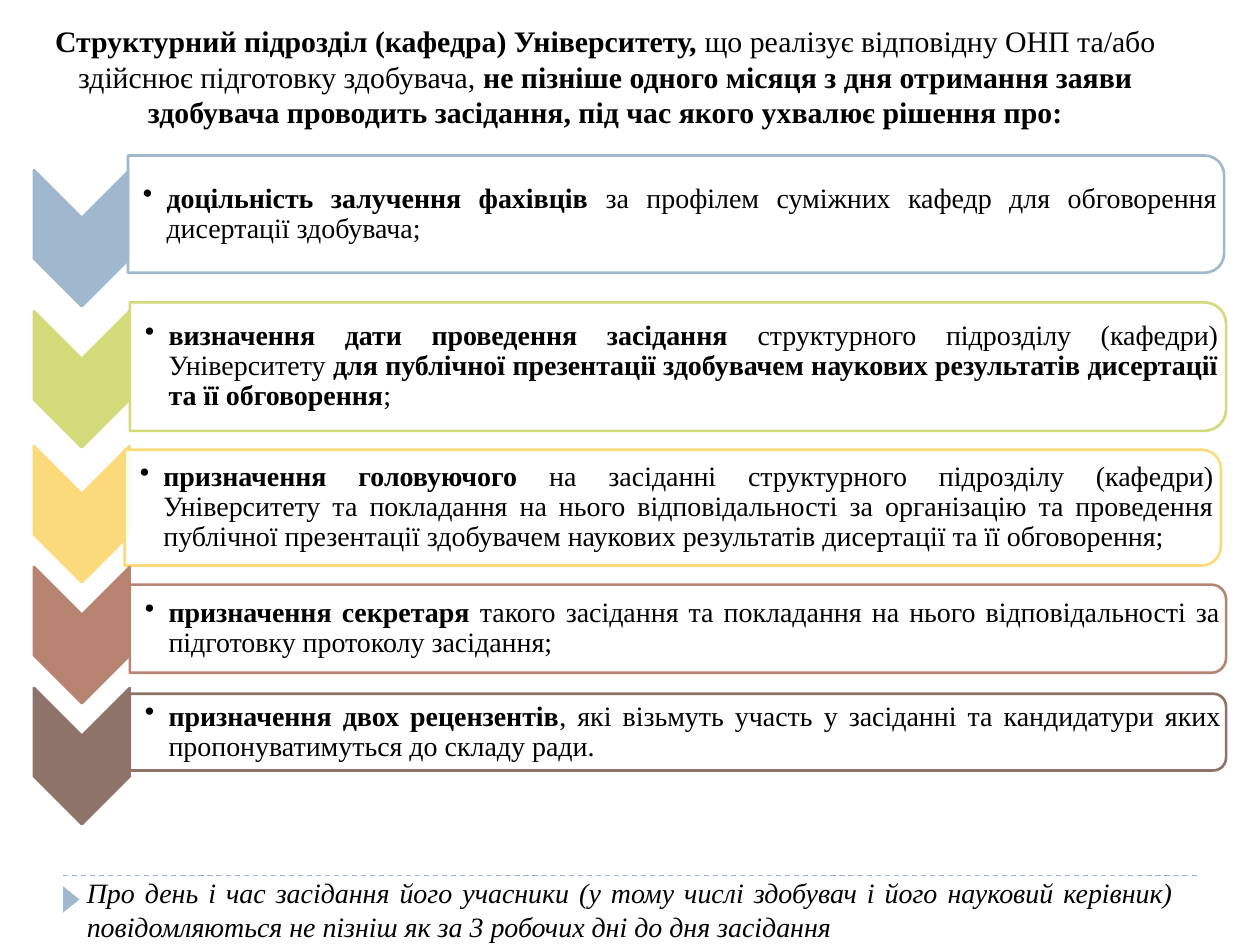
from lxml.etree import SubElement
from pptx import Presentation
from pptx.dml.color import RGBColor
from pptx.enum.dml import MSO_LINE
from pptx.enum.shapes import MSO_CONNECTOR, MSO_SHAPE as Shape
from pptx.enum.text import MSO_ANCHOR as Anchor, PP_ALIGN as Align
from pptx.oxml.ns import qn
from pptx.util import Pt

FONT = "Times New Roman"
BLACK = RGBColor(0x00, 0x00, 0x00)
WHITE = RGBColor(0xFF, 0xFF, 0xFF)
BLUE = RGBColor(0x9F, 0xB8, 0xCD)
GREEN = RGBColor(0xD2, 0xDA, 0x7A)
YELLOW = RGBColor(0xFA, 0xDA, 0x7A)
TERRACOTTA = RGBColor(0xB8, 0x84, 0x72)
BROWN = RGBColor(0x8E, 0x73, 0x6A)

CHEVRON_LEFT, CHEVRON_WIDTH, CHEVRON_HEIGHT = 19.4, 54.7, 77.8
BAR_WIDTH = 626.4

# Text spans are (wording, bold).
TITLE = [
    ("Структурний підрозділ (кафедра) Університету, ", True),
    ("що реалізує відповідну ОНП та/або здійснює підготовку здобувача, ", False),
    ("не пізніше одного місяця з дня отримання заяви здобувача проводить "
     "засідання, під час якого ухвалює рішення про:", True),
]
FOOTNOTE = [
    ("Про день і час засідання його учасники (у тому числі здобувач і його "
     "науковий керівник) повідомляються не пізніш як за 3 робочих дні до дня "
     "засідання", False),
]
# Each decision: colour, chevron top, bar left, bar top, bar height, spans.
DECISIONS = [
    (BLUE, 97.2, 73.1, 88.9, 67, [
        ("доцільність залучення фахівців ", True),
        ("за профілем суміжних кафедр для обговорення дисертації здобувача;", False)]),
    (GREEN, 177.8, 74.2, 172.8, 73.4, [
        ("визначення дати проведення засідання ", True),
        ("структурного підрозділу (кафедри) Університету ", False),
        ("для публічної презентації здобувачем наукових результатів дисертації "
         "та її обговорення", True),
        (";", False)]),
    (YELLOW, 254.9, 71.3, 257, 66.2, [
        ("призначення головуючого ", True),
        ("на засіданні структурного підрозділу (кафедри) Університету та "
         "покладання на нього відповідальності за організацію та проведення "
         "публічної презентації здобувачем наукових результатів дисертації та "
         "її обговорення;", False)]),
    (TERRACOTTA, 324, 74.2, 334.1, 50.4, [
        ("призначення секретаря ", True),
        ("такого засідання та покладання на нього відповідальності за "
         "підготовку протоколу засідання;", False)]),
    (BROWN, 393.1, 74.2, 396.4, 43.9, [
        ("призначення двох рецензентів", True),
        (", які візьмуть участь у засіданні та кандидатури яких "
         "пропонуватимуться до складу ради.", False)]),
]


def add_turned_shape(page, kind, left, top, width, height, fill, line=None):
    """Add a shape turned by 90 degrees that covers the given box on the page."""
    shift = (width - height) / 2
    shape = page.shapes.add_shape(
        kind, Pt(left + shift), Pt(top - shift), Pt(height), Pt(width))
    shape.rotation = 90
    shape.shadow.inherit = False
    shape.fill.solid()
    shape.fill.fore_color.rgb = fill
    if line is None:
        shape.line.fill.background()
    else:
        shape.line.color.rgb = line
        shape.line.width = Pt(1.5)
    return shape


def add_text(page, left, top, width, height, spans, size, align,
             italic=None, bullet=False):
    box = page.shapes.add_textbox(Pt(left), Pt(top), Pt(width), Pt(height))
    frame = box.text_frame
    frame.word_wrap = True
    para = frame.paragraphs[0]
    para.alignment = align
    if bullet:
        frame.vertical_anchor = Anchor.MIDDLE
        frame.margin_left = Pt(8.6)
        frame.margin_top = frame.margin_right = frame.margin_bottom = Pt(0.7)
        para.line_spacing = 0.9
        properties = para._p.get_or_add_pPr()
        properties.set("marL", str(Pt(13.5)))
        properties.set("indent", str(-Pt(13.5)))
        SubElement(properties, qn("a:buChar"), char="•")
    para.font.name = FONT
    para.font.size = Pt(size)
    para.font.color.rgb = BLACK
    para.font.italic = italic
    for wording, bold in spans:
        span = para.add_run()
        span.text = wording
        span.font.bold = bold


def add_decision(page, colour, chevron_top, left, top, height, spans):
    add_turned_shape(page, Shape.CHEVRON, CHEVRON_LEFT, chevron_top,
                     CHEVRON_WIDTH, CHEVRON_HEIGHT, colour, colour)
    bar = add_turned_shape(page, Shape.ROUND_2_SAME_RECTANGLE, left, top,
                           BAR_WIDTH, height, WHITE, colour)
    white = bar.fill._xPr.find(qn("a:solidFill"))[0]
    SubElement(white, qn("a:alpha"), val="90000")
    # The text area stays clear of the rounded corners.
    add_text(page, left, top + 0.05 * height, BAR_WIDTH - 0.05 * height,
             0.9 * height, spans, 16, Align.JUSTIFY, bullet=True)


def add_footer_marks(page, left, top, width):
    rule = page.shapes.add_connector(
        MSO_CONNECTOR.STRAIGHT, Pt(left), Pt(top), Pt(left + width), Pt(top))
    rule.line.color.rgb = BLUE
    rule.line.width = Pt(0.75)
    rule.line.dash_style = MSO_LINE.DASH
    SubElement(rule._element.spPr, qn("a:effectLst"))
    add_turned_shape(page, Shape.ISOSCELES_TRIANGLE, left, top + 6,
                     9.4, 15.1, BLUE)


def main():
    deck = Presentation()
    deck.slide_width, deck.slide_height = Pt(720), Pt(540)
    page = deck.slides.add_slide(deck.slide_layouts[6])
    add_footer_marks(page, 36, 500.4, 648)
    add_text(page, 0, 9.4, 692, 69, TITLE, 17, Align.CENTER)
    for decision in DECISIONS:
        add_decision(page, *decision)
    add_text(page, 42.5, 496.8, 635, 46, FOOTNOTE, 16, Align.JUSTIFY, italic=True)
    deck.save("out.pptx")


if __name__ == "__main__":
    main()
